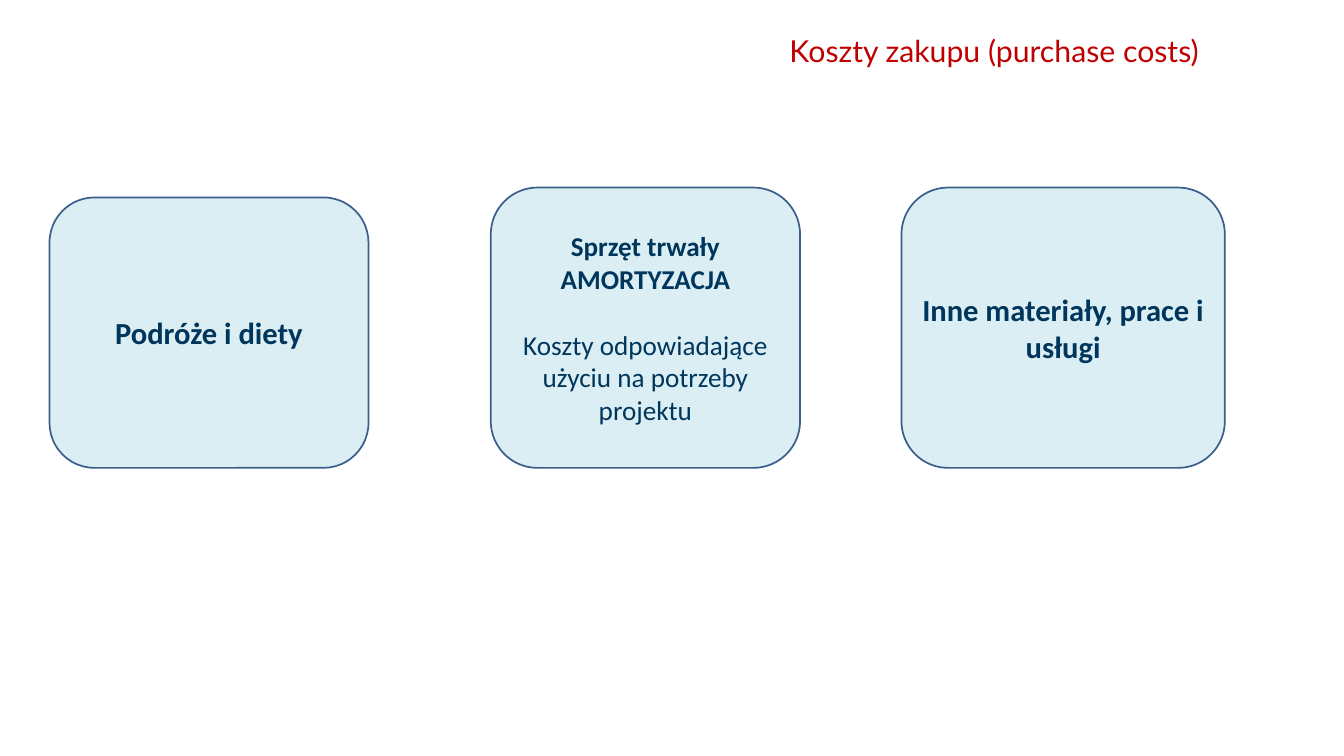
"""Builds a slide with three purchase cost categories."""
from dataclasses import dataclass

import pptx
import pptx.dml.color
import pptx.enum.shapes
import pptx.enum.text
import pptx.util

Pt = pptx.util.Pt
RGB = pptx.dml.color.RGBColor


@dataclass(frozen=True)
class Theme:
    title_font: str = "Lato"
    card_font: str = "Calibri"
    title_color: RGB = RGB(0xC0, 0x00, 0x00)
    text_color: RGB = RGB(0x00, 0x36, 0x5B)
    card_fill: RGB = RGB(0xDB, 0xEE, 0xF4)
    card_line: RGB = RGB(0x3A, 0x5F, 0x8C)
    title_size: float = 35.6
    label_size: float = 36
    detail_size: float = 32
    line_width: float = 2


THEME = Theme()
CARD_BOTTOM = 551.2


def style(paragraph, name, size, color, bold=False):
    for span in paragraph.runs:
        span.font.name = name
        span.font.size = Pt(size)
        span.font.color.rgb = color
        span.font.bold = bold


def add_title(page, text, left, top, width, height):
    box = page.shapes.add_textbox(Pt(left), Pt(top), Pt(width), Pt(height))
    frame = box.text_frame
    frame.word_wrap = True
    frame.vertical_anchor = pptx.enum.text.MSO_ANCHOR.MIDDLE
    frame.text = text
    style(frame.paragraphs[0], THEME.title_font, THEME.title_size, THEME.title_color)


def add_card(page, left, top, width, size, heading, detail=None):
    card = page.shapes.add_shape(
        pptx.enum.shapes.MSO_SHAPE.ROUNDED_RECTANGLE,
        Pt(left), Pt(top), Pt(width), Pt(CARD_BOTTOM - top))
    card.shadow.inherit = False
    card.fill.solid()
    card.fill.fore_color.rgb = THEME.card_fill
    card.line.color.rgb = THEME.card_line
    card.line.width = Pt(THEME.line_width)
    frame = card.text_frame
    frame.word_wrap = True
    frame.vertical_anchor = pptx.enum.text.MSO_ANCHOR.MIDDLE
    frame.text = heading
    for para in frame.paragraphs:
        style(para, THEME.card_font, size, THEME.text_color, bold=True)
    if detail:
        para = frame.add_paragraph()
        para.text = detail
        para.space_before = Pt(39)
        style(para, THEME.card_font, size, THEME.text_color)
    for para in frame.paragraphs:
        para.alignment = pptx.enum.text.PP_ALIGN.CENTER


def main():
    deck = pptx.Presentation()
    deck.slide_width, deck.slide_height = Pt(1583.28), Pt(890.64)
    page = deck.slides.add_slide(deck.slide_layouts[6])
    add_title(page, "Koszty zakupu (purchase costs)", 923, 14.4, 551.5, 90.7)
    add_card(page, 58.3, 232.6, 375.8, THEME.label_size, "Podróże i diety")
    add_card(page, 578.2, 221, 364.3, THEME.detail_size,
             "Sprzęt trwały\nAMORTYZACJA",
             "Koszty odpowiadające użyciu na potrzeby projektu")
    add_card(page, 1062, 221, 380.9, THEME.label_size, "Inne materiały, prace i usługi")
    deck.save("out.pptx")


if __name__ == "__main__":
    main()
